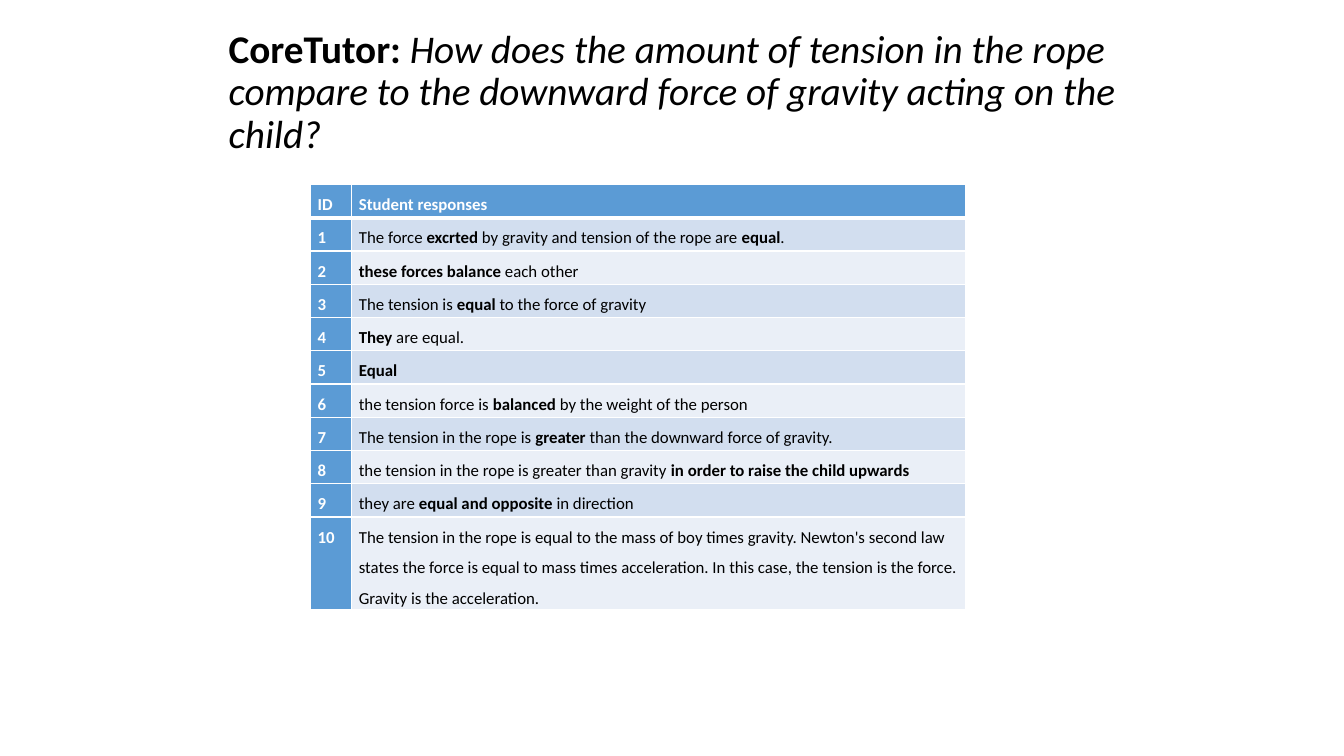
from lxml.etree import SubElement
from pptx import Presentation
from pptx.dml.color import RGBColor
from pptx.enum.text import MSO_ANCHOR
from pptx.oxml.ns import qn
from pptx.util import Inches, Pt

# Text between asterisks is bold.
TITLE = ("CoreTutor: ", "How does the amount of tension in the rope compare to "
         "the downward force of gravity acting on the child?")
HEADER = ("ID", "Student responses")
RESPONSES = [
    "The force *excrted* by gravity and tension of the rope are *equal*.",
    "*these forces balance* each other",
    "The tension is *equal* to the force of gravity",
    "*They* are equal.",
    "*Equal*",
    "the tension force is *balanced* by the weight of the person",
    "The tension in the rope is *greater* than the downward force of gravity.",
    "the tension in the rope is greater than gravity "
    "*in order to raise the child upwards*",
    "they are *equal and opposite *in direction",
    "The tension in the rope is equal to the mass of boy times gravity. "
    "Newton's second law states the force is equal to mass times acceleration. "
    "In this case, the tension is the force. Gravity is the acceleration.",
]
BLUE, WHITE, BLACK = "5B9BD5", "FFFFFF", "000000"
BANDS = ("D2DEEF", "EAEFF7")
COL_WIDTHS = (0.41, 6.09)
ROW_HEIGHT = 0.33


def rgb(value):
    return RGBColor.from_string(value)


def add_run(p, text, size=12, color=BLACK, bold=False, italic=False):
    r = p.add_run()
    r.text = text
    r.font.name = "Calibri"
    r.font.size = Pt(size)
    r.font.bold = bold
    r.font.italic = italic
    r.font.color.rgb = rgb(color)


def add_border(cell, side, width):
    ln = SubElement(cell._tc.get_or_add_tcPr(), qn("a:ln" + side), w=str(Pt(width)))
    SubElement(SubElement(ln, qn("a:solidFill")), qn("a:srgbClr"), val=WHITE)


def fill_cell(cell, text, fill, color=BLACK, bold=False, bottom=1, top=1):
    """Write text into a cell, with bold toggled at each asterisk."""
    cell.margin_left = cell.margin_right = Inches(0.07)
    cell.margin_top = cell.margin_bottom = 0
    for side, width in zip("LRTB", (1, 1, top, bottom)):
        add_border(cell, side, width)
    cell.fill.solid()
    cell.fill.fore_color.rgb = rgb(fill)
    p = cell.text_frame.paragraphs[0]
    p.line_spacing = 1.5
    for i, part in enumerate(text.split("*")):
        if part:
            add_run(p, part, color=color, bold=bold or i % 2 == 1)


def add_title(slide):
    box = slide.shapes.add_textbox(Inches(2.17), Inches(0.24), Inches(9), Inches(1.37))
    tf = box.text_frame
    tf.word_wrap = True
    tf.vertical_anchor = MSO_ANCHOR.MIDDLE
    p = tf.paragraphs[0]
    p.line_spacing = 0.9
    lead, question = TITLE
    add_run(p, lead, size=28, bold=True)
    add_run(p, question, size=28, italic=True)


def add_responses(slide):
    count = len(RESPONSES) + 1
    table = slide.shapes.add_table(
        count, len(COL_WIDTHS), Inches(3.08), Inches(1.83),
        Inches(sum(COL_WIDTHS)), Inches(ROW_HEIGHT * (count + 1))).table
    table.first_col = True
    for column, width in zip(table.columns, COL_WIDTHS):
        column.width = Inches(width)
    for row in table.rows:
        row.height = Inches(ROW_HEIGHT)
    table.rows[count - 1].height = Inches(2 * ROW_HEIGHT)

    for c, text in enumerate(HEADER):
        fill_cell(table.cell(0, c), text, BLUE, WHITE, bold=True, bottom=3)
    for n, response in enumerate(RESPONSES, 1):
        top = 3 if n == 1 else 1
        fill_cell(table.cell(n, 0), str(n), BLUE, WHITE, bold=True, top=top)
        fill_cell(table.cell(n, 1), response, BANDS[(n - 1) % 2], top=top)


def main():
    prs = Presentation()
    prs.slide_width, prs.slide_height = Inches(13.33), Inches(7.5)
    slide = prs.slides.add_slide(prs.slide_layouts[6])
    add_responses(slide)
    add_title(slide)
    prs.save("out.pptx")


if __name__ == "__main__":
    main()
